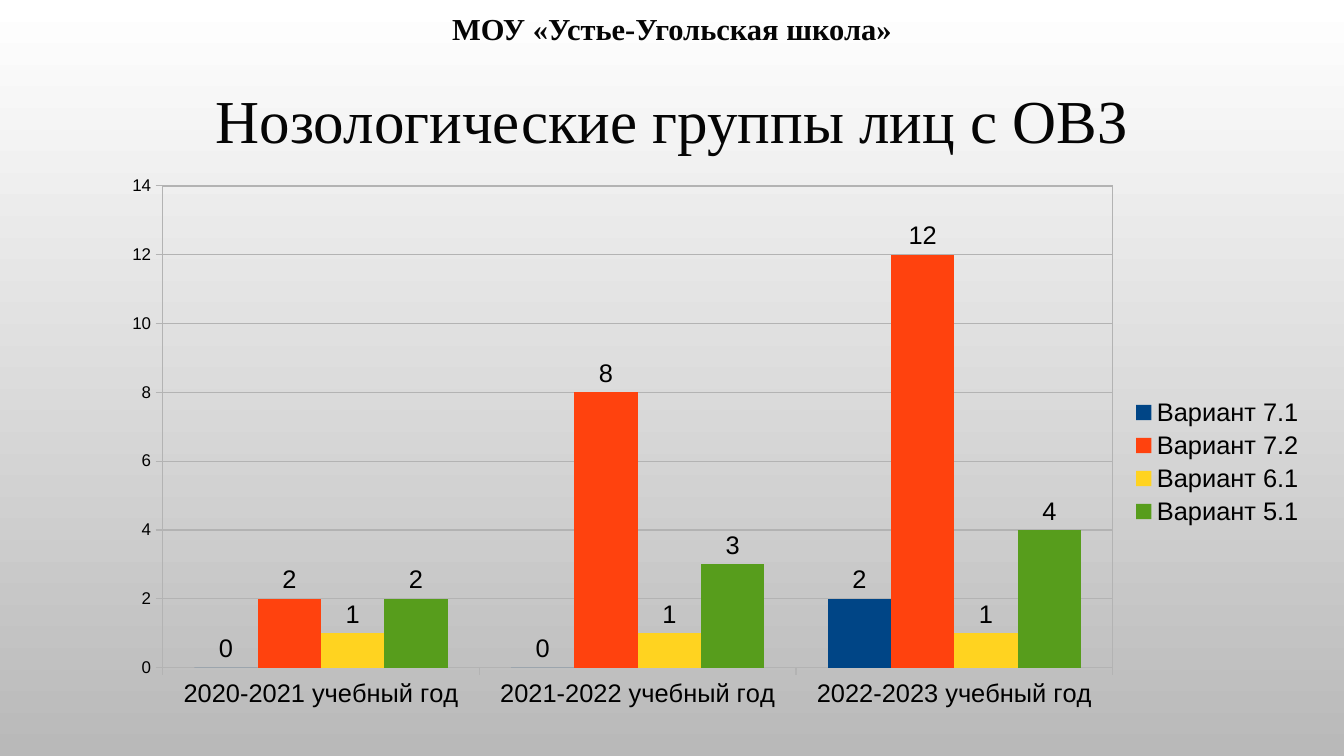
"""Build a slide with a column chart of pupil groups by school year."""
from lxml import etree
from pptx import Presentation
from pptx.chart.data import CategoryChartData
from pptx.dml.color import RGBColor
from pptx.enum.chart import XL_CHART_TYPE as ChartType
from pptx.enum.chart import XL_LABEL_POSITION as LabelPosition
from pptx.enum.chart import XL_LEGEND_POSITION as LegendPosition
from pptx.enum.chart import XL_TICK_MARK as TickMark
from pptx.enum.text import MSO_ANCHOR as Anchor
from pptx.enum.text import MSO_AUTO_SIZE as AutoSize
from pptx.enum.text import PP_ALIGN as Align
from pptx.oxml import parse_xml
from pptx.util import Pt

COLORS = {"top": "FFFFFF", "bottom": "B9B9B9", "heading": "050505",
          "text": "000000", "line": "B3B3B3"}
SCHOOL = "МОУ «Устье-Угольская школа»"
TITLE = "Нозологические группы лиц с ОВЗ"
YEARS = ["2020-2021 учебный год", "2021-2022 учебный год", "2022-2023 учебный год"]
SERIES = [
    ("Вариант 7.1", (0, 0, 2), "004586"),
    ("Вариант 7.2", (2, 8, 12), "FF420E"),
    ("Вариант 6.1", (1, 1, 1), "FFD320"),
    ("Вариант 5.1", (2, 3, 4), "579D1C"),
]
WIDTH, HEIGHT = 793.44, 446.4
SCHOOL_BOX = (0, 2.16, WIDTH, 28.8)
TITLE_BOX = (0, 41.04, WIDTH, 58.32)
CHART_BOX = (67.68, 99.36, 709.92, 347.04)
PLOT = {"x": 0.04, "y": 0.03, "w": 0.79, "h": 0.82}
CHART_NS = "http://schemas.openxmlformats.org/drawingml/2006/chart"
DRAWING_NS = "http://schemas.openxmlformats.org/drawingml/2006/main"


def set_format(target, values):
    for name, value in values.items():
        setattr(target, name, value)


def set_font(font, name, size, color, bold=False):
    set_format(font, {"name": name, "size": Pt(size), "bold": bold})
    font.color.rgb = RGBColor.from_string(COLORS[color])


def set_line(line):
    line.color.rgb = RGBColor.from_string(COLORS["line"])
    line.width = Pt(0.75)


def place(shape, box):
    set_format(shape, dict(zip(("left", "top", "width", "height"), map(Pt, box))))


def write_heading(shape, text, size, bold, anchor, auto_size):
    frame = shape.text_frame
    frame.text = text
    set_format(frame, {"word_wrap": True, "vertical_anchor": anchor, "auto_size": auto_size})
    paragraph = frame.paragraphs[0]
    paragraph.alignment = Align.CENTER
    set_font(paragraph.runs[0].font, "Times New Roman", size, "heading", bold)


def fill_background(slide):
    fill = slide.background.fill
    fill.gradient()
    fill.gradient_angle = 270
    for stop, position, color in zip(fill.gradient_stops, (0, 1), ("top", "bottom")):
        stop.position = position
        stop.color.rgb = RGBColor.from_string(COLORS[color])


def frame_plot(chart):
    plot_area = chart.element.find(f".//{{{CHART_NS}}}plotArea")
    for layout in plot_area.findall(f"{{{CHART_NS}}}layout"):
        plot_area.remove(layout)
    layout = etree.Element(f"{{{CHART_NS}}}layout")
    manual = etree.SubElement(layout, f"{{{CHART_NS}}}manualLayout")
    settings = {"layoutTarget": "inner", "xMode": "edge", "yMode": "edge", **PLOT}
    for tag, value in settings.items():
        etree.SubElement(manual, f"{{{CHART_NS}}}{tag}", val=str(value))
    plot_area.insert(0, layout)
    plot_area.append(parse_xml(
        f'<c:spPr xmlns:c="{CHART_NS}" xmlns:a="{DRAWING_NS}"><a:noFill/>'
        f'<a:ln w="{Pt(0.75)}"><a:solidFill><a:srgbClr val="{COLORS["line"]}"/>'
        '</a:solidFill></a:ln></c:spPr>'))


def add_groups_chart(slide):
    data = CategoryChartData(number_format="General")
    data.categories = YEARS
    for name, values, _ in SERIES:
        data.add_series(name, values)
    chart = slide.shapes.add_chart(
        ChartType.COLUMN_CLUSTERED, *map(Pt, CHART_BOX), data).chart
    set_format(chart, {"has_title": False, "has_legend": True})
    set_font(chart.font, "Arial", 10, "text")
    set_format(chart.legend, {"position": LegendPosition.RIGHT, "include_in_layout": False})
    set_font(chart.legend.font, "Arial", 15, "text")

    for axis, size in ((chart.category_axis, 15), (chart.value_axis, 10)):
        set_format(axis, {"major_tick_mark": TickMark.OUTSIDE,
                          "minor_tick_mark": TickMark.NONE})
        set_font(axis.tick_labels.font, "Arial", size, "text")
        set_line(axis.format.line)
    set_format(chart.value_axis, {"minimum_scale": 0, "maximum_scale": 14,
                                  "major_unit": 2, "has_major_gridlines": True})
    set_line(chart.value_axis.major_gridlines.format.line)

    plot = chart.plots[0]
    set_format(plot, {"gap_width": 100, "overlap": 0, "vary_by_categories": False})
    for series, (_, _, color) in zip(plot.series, SERIES):
        series.format.fill.solid()
        series.format.fill.fore_color.rgb = RGBColor.from_string(color)
        labels = series.data_labels
        set_format(labels, {"show_value": True, "position": LabelPosition.OUTSIDE_END,
                            "number_format": "General", "number_format_is_linked": False})
        set_font(labels.font, "Arial", 15, "text")
    frame_plot(chart)


def main():
    presentation = Presentation()
    set_format(presentation, {"slide_width": Pt(WIDTH), "slide_height": Pt(HEIGHT)})
    slide = presentation.slides.add_slide(presentation.slide_layouts[5])
    fill_background(slide)
    title = slide.shapes.title
    place(title, TITLE_BOX)
    write_heading(title, TITLE, 36, False, Anchor.MIDDLE, AutoSize.NONE)
    add_groups_chart(slide)
    school = slide.shapes.add_textbox(*map(Pt, SCHOOL_BOX))
    write_heading(school, SCHOOL, 18, True, Anchor.TOP, AutoSize.SHAPE_TO_FIT_TEXT)
    presentation.save("out.pptx")


if __name__ == "__main__":
    main()
